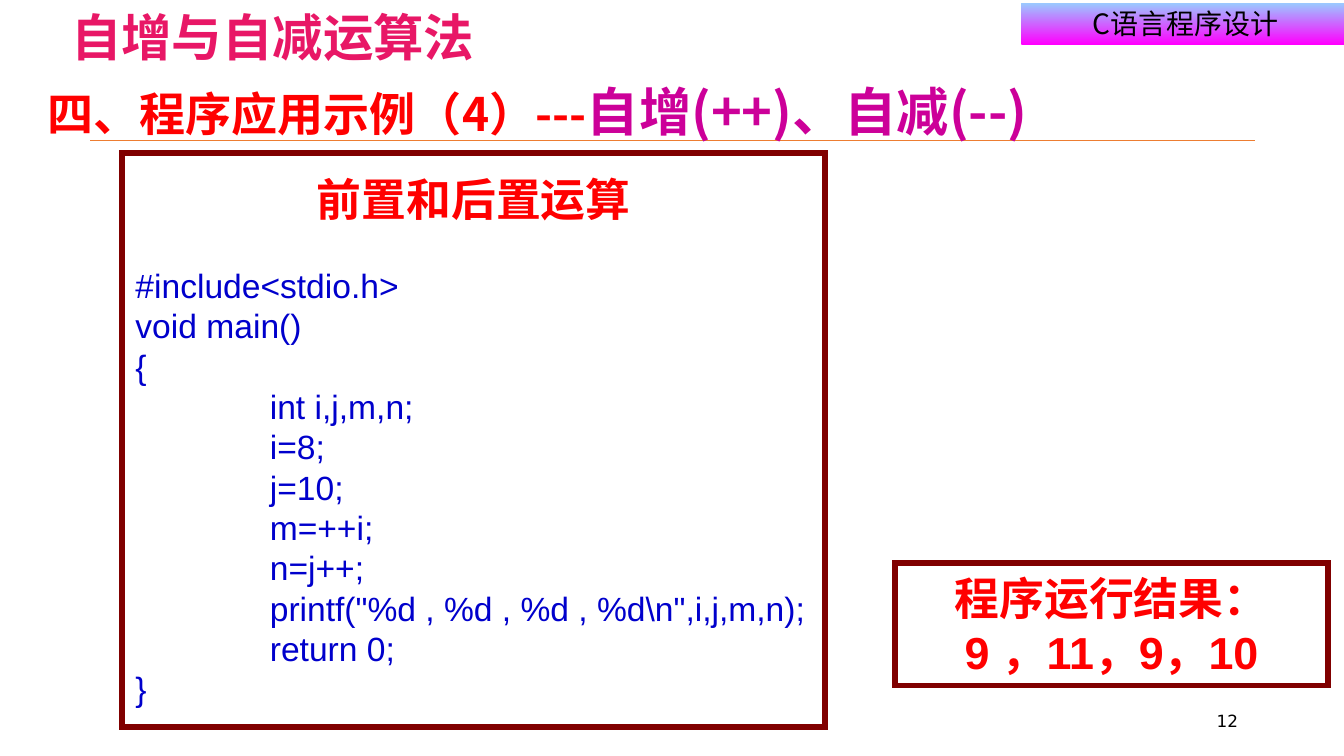
from pptx import Presentation
from pptx.dml.color import RGBColor
from pptx.enum.shapes import MSO_CONNECTOR, MSO_SHAPE
from pptx.enum.text import MSO_ANCHOR, MSO_AUTO_SIZE, PP_ALIGN
from pptx.oxml.ns import qn
from pptx.util import Inches, Pt

RECTANGLE = MSO_SHAPE.RECTANGLE
STRAIGHT = MSO_CONNECTOR.STRAIGHT
TOP, MIDDLE = MSO_ANCHOR.TOP, MSO_ANCHOR.MIDDLE
GROW = MSO_AUTO_SIZE.SHAPE_TO_FIT_TEXT
LEFT, CENTER, RIGHT = PP_ALIGN.LEFT, PP_ALIGN.CENTER, PP_ALIGN.RIGHT

COLORS = {
    "white": "FFFFFF", "black": "000000", "red": "FF0000", "maroon": "800000",
    "code": "0000CC", "purple": "CC0099", "title": "E81766", "rule": "ED7D31",
    "banner_top": "99CCFF", "banner_bottom": "FF00FF",
}
CHINESE = "Noto Sans CJK SC"
CODE = """#include<stdio.h>
void main()
{
\tint i,j,m,n;
\ti=8;
\tj=10;
\tm=++i;
\tn=j++;
\tprintf("%d , %d , %d , %d\\n",i,j,m,n);
\treturn 0;
}""".split("\n")


def color(name):
    """Return the named colour."""
    return RGBColor.from_string(COLORS[name])


def add_child(parent, tag, **attributes):
    """Append a drawing element to a parent and return it."""
    child = parent.makeelement(qn(tag), attributes)
    parent.append(child)
    return child


def add_run(paragraph, text, size, color_name, font=CHINESE, bold=False, east_asian=CHINESE):
    """Append a run with its Latin and East Asian fonts."""
    run = paragraph.add_run()
    run.text = text
    run.font.size = Pt(size)
    run.font.bold = bold
    run.font.name = font
    run.font.color.rgb = color(color_name)
    add_child(run.font._element, "a:ea", typeface=east_asian)


def next_paragraph(frame, alignment=LEFT):
    """Return the empty first paragraph or a new one."""
    first = frame.paragraphs[0]
    paragraph = frame.add_paragraph() if first.runs else first
    paragraph.alignment = alignment
    return paragraph


def add_text_box(slide, left, top, width, height, anchor=TOP, wrap=True):
    """Add a text box and return its text frame."""
    box = slide.shapes.add_textbox(Inches(left), Inches(top), Inches(width), Inches(height))
    frame = box.text_frame
    frame.word_wrap = wrap
    frame.vertical_anchor = anchor
    return frame


def add_rectangle(slide, left, top, width, height, wrap=True):
    """Add a plain rectangle with vertically centred text."""
    shape = slide.shapes.add_shape(
        RECTANGLE, Inches(left), Inches(top), Inches(width), Inches(height))
    shape.shadow.inherit = False
    shape.text_frame.word_wrap = wrap
    shape.text_frame.vertical_anchor = MIDDLE
    return shape


def add_frame(slide, left, top, width, height, wrap=True):
    """Add a white box with a sharp maroon border and return its text frame."""
    shape = add_rectangle(slide, left, top, width, height, wrap)
    shape.fill.solid()
    shape.fill.fore_color.rgb = color("white")
    shape.line.color.rgb = color("maroon")
    shape.line.width = Pt(3)
    add_child(shape._element.spPr.find(qn("a:ln")), "a:miter", lim="800000")
    shape.text_frame.auto_size = GROW
    return shape.text_frame


def add_banner(slide):
    """Add the course name on a vertical gradient."""
    banner = add_rectangle(slide, 7.6, 0.02, 2.44, 0.31)
    banner.line.fill.background()
    banner.fill.gradient()
    banner.fill.gradient_angle = 270
    for stop, name in zip(banner.fill.gradient_stops, ("banner_top", "banner_bottom")):
        stop.color.rgb = color(name)
    add_run(next_paragraph(banner.text_frame, CENTER), "C语言程序设计", 15, "black")


def add_rule(slide):
    """Add the thin line under the heading."""
    rule = slide.shapes.add_connector(
        STRAIGHT, Inches(0.67), Inches(1.04), Inches(9.34), Inches(1.04))
    rule.line.color.rgb = color("rule")
    rule.line.width = Pt(0.25)
    add_child(rule._element.spPr, "a:effectLst")


def add_heading(slide):
    """Add the two-colour section heading."""
    frame = add_text_box(slide, 0.28, 0.5, 8.58, 0.57)
    frame.margin_left = frame.margin_right = Inches(0.07)
    frame.margin_top = frame.margin_bottom = Inches(0.04)
    paragraph = next_paragraph(frame)
    paragraph.line_spacing = 1.1
    add_run(paragraph, "四、程序应用示例（4）---", 24.7, "red", bold=True)
    add_run(paragraph, "自增(++)、自减(--)", 28, "purple", bold=True)


def add_program(slide):
    """Add the box with the program listing."""
    frame = add_frame(slide, 0.91, 1.14, 5.23, 4.27, wrap=False)
    caption = next_paragraph(frame, CENTER)
    caption.space_after = Pt(21)
    add_run(caption, "前置和后置运算", 24, "red", "Arial", bold=True)
    for line in CODE:
        paragraph = next_paragraph(frame)
        tabs = add_child(paragraph._p.get_or_add_pPr(), "a:tabLst")
        add_child(tabs, "a:tab", pos=str(Inches(1)), algn="l")
        add_run(paragraph, line, 18, "code", "Arial")


def add_result(slide):
    """Add the box with the program output."""
    frame = add_frame(slide, 6.66, 4.19, 3.22, 0.91)
    for line in ("程序运行结果：", "9 ，11，9，10"):
        add_run(next_paragraph(frame, CENTER), line, 24, "red", "Arial", bold=True)


def main():
    """Build and save the slide."""
    presentation = Presentation()
    presentation.slide_width = Inches(10)
    presentation.slide_height = Inches(10) * 9 // 16
    slide = presentation.slides.add_slide(presentation.slide_layouts[6])
    add_banner(slide)
    title = add_text_box(slide, 0.2, 0, 3.66, 0.3, wrap=False)
    add_run(next_paragraph(title, CENTER), "自增与自减运算法", 27, "title",
            "Noto Sans CJK JP", bold=True, east_asian="Noto Sans CJK JP")
    add_rule(slide)
    number = add_text_box(slide, 7.06, 5.21, 2.25, 0.3, MIDDLE)
    add_run(next_paragraph(number, RIGHT), "12", 9, "black", "DejaVu Sans")
    add_program(slide)
    add_result(slide)
    add_heading(slide)
    presentation.save("out.pptx")


if __name__ == "__main__":
    main()
